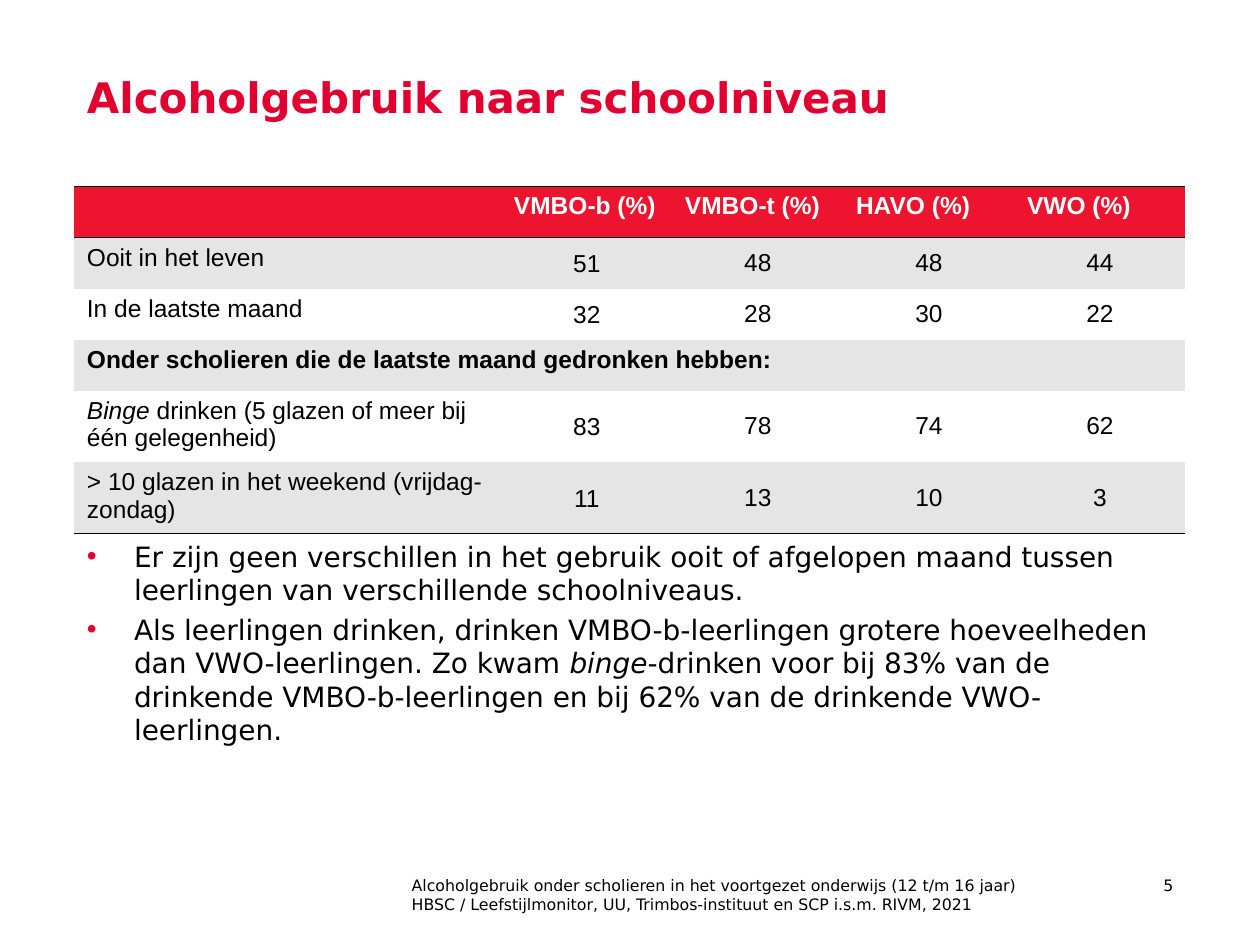
"""Builds the slide on alcohol use by school level."""
from lxml import etree
from pptx import Presentation, util as u
from pptx.dml import color
from pptx.enum import text
from pptx.oxml import ns

Pt = u.Pt
HUES = {"red": "E20031", "head": "EC142E", "grey": "E5E5E5",
        "white": "FFFFFF", "black": "000000"}
SANS = "DejaVu Sans"
TITLE = {"name": SANS, "size": Pt(24), "bold": True}
BODY = {"name": SANS, "size": Pt(16)}
FOOT = {"name": SANS, "size": Pt(9)}
CELL = {"name": "Arial", "size": Pt(14), "bold": False}
BOLD = {**CELL, "bold": True}
LEFT, WIDE = 42.5, 635
PLAIN = "{2D5ABB26-0587-4C30-8999-92F81FD0307C}"
HEADS = ["", "VMBO-b (%)", "VMBO-t (%)", "HAVO (%)", "VWO (%)"]
ROWS = [
    (["Ooit in het leven"], [51, 48, 48, 44]),
    (["In de laatste maand"], [32, 28, 30, 22]),
    (["Onder scholieren die de laatste maand gedronken hebben:"], []),
    (["", "Binge", " drinken (5 glazen of meer bij één gelegenheid)"],
     [83, 78, 74, 62]),
    (["> 10 glazen in het weekend (vrijdag-zondag)"], [11, 13, 10, 3]),
]
POINTS = [
    ["Er zijn geen verschillen in het gebruik ooit of afgelopen maand tussen "
     "leerlingen van verschillende schoolniveaus."],
    ["Als leerlingen drinken, drinken VMBO-b-leerlingen grotere hoeveelheden "
     "dan VWO-leerlingen. Zo kwam ", "binge",
     "-drinken voor bij 83% van de drinkende VMBO-b-leerlingen en bij 62% "
     "van de drinkende VWO-leerlingen."],
]
SOURCE = [
    ["Alcoholgebruik onder scholieren in het voortgezet onderwijs "
     "(12 t/m 16 jaar)"],
    ["HBSC / Leefstijlmonitor, UU, Trimbos-instituut en SCP i.s.m. RIVM, 2021"],
]


def tint(hue):
    """Return the named colour."""
    return color.RGBColor.from_string(HUES[hue])


def assign(item, form):
    """Set every attribute named in a dict."""
    for key, val in form.items():
        setattr(item, key, val)


def write(para, parts, form, hue="black"):
    """Add runs to a paragraph, with every second one in italics."""
    for num, part in enumerate(parts):
        if part:
            run = para.add_run()
            run.text = part
            assign(run.font, {**form, "italic": num % 2 == 1})
            run.font.color.rgb = tint(hue)


def bullet(para):
    """Give a paragraph a red bullet with a hanging indent."""
    prop = para._p.get_or_add_pPr()
    prop.set("marL", str(Pt(27)))
    prop.set("indent", str(Pt(-27)))
    clr = etree.SubElement(prop, ns.qn("a:buClr"))
    etree.SubElement(clr, ns.qn("a:srgbClr"), val=HUES["red"])
    etree.SubElement(prop, ns.qn("a:buFont"), typeface="Arial")
    etree.SubElement(prop, ns.qn("a:buChar"), char="•")


def add_text(slide, area, lines, form, align="LEFT", dots=False):
    """Add a wrapped text box with one paragraph per line."""
    frame = slide.shapes.add_textbox(*map(Pt, area)).text_frame
    frame.word_wrap = True
    for num, parts in enumerate(lines):
        para = frame.add_paragraph() if num else frame.paragraphs[0]
        para.alignment = text.PP_ALIGN[align]
        if dots:
            if num:
                para.space_before = Pt(3.2)
            bullet(para)
        write(para, parts, form)


def add_title(slide, words):
    """Place and format the title."""
    title = slide.shapes.title
    assign(title, {"left": Pt(LEFT), "top": Pt(37.5),
                   "width": Pt(WIDE), "height": Pt(90.5)})
    frame = title.text_frame
    assign(frame, {"vertical_anchor": text.MSO_ANCHOR.TOP,
                   "auto_size": text.MSO_AUTO_SIZE.NONE, "word_wrap": True})
    para = frame.paragraphs[0]
    para.alignment = text.PP_ALIGN.LEFT
    write(para, [words], TITLE, "red")


def rule(cell, side):
    """Draw a black line on one side of a cell."""
    prop = cell._tc.get_or_add_tcPr()
    line = etree.SubElement(prop, ns.qn("a:ln" + side), w=str(Pt(1)))
    fill = etree.SubElement(line, ns.qn("a:solidFill"))
    etree.SubElement(fill, ns.qn("a:srgbClr"), val=HUES["black"])


def paint(cell, hue, sides=""):
    """Rule the given sides of a cell and fill it."""
    for side in sides:
        rule(cell, side)
    cell.fill.solid()
    cell.fill.fore_color.rgb = tint(hue)


def put_value(cell, val, first):
    """Write a centred figure in a cell with narrow margins."""
    edge = 0.7 if first else 1.4
    assign(cell, {"vertical_anchor": text.MSO_ANCHOR.MIDDLE,
                  "margin_left": Pt(0.7), "margin_right": Pt(0.7),
                  "margin_top": Pt(edge),
                  "margin_bottom": Pt(0 if first else edge)})
    para = cell.text_frame.paragraphs[0]
    para.alignment = text.PP_ALIGN.CENTER
    write(para, [str(val)], CELL)


def add_grid(slide):
    """Add the table of percentages by school level."""
    count = len(ROWS) + 1
    grid = slide.shapes.add_table(count, len(HEADS), Pt(LEFT), Pt(106.5),
                                  Pt(WIDE), Pt(29.2 * count)).table
    grid._tbl.tblPr.find(ns.qn("a:tableStyleId")).text = PLAIN
    for num, col in enumerate(grid.columns):
        col.width = Pt(97.75 if num else 244)
    for num, row in enumerate(grid.rows):
        row.height = Pt(29.2 if num < 4 else 38.9)
    for num, head in enumerate(HEADS):
        cell = grid.cell(0, num)
        paint(cell, "head", "TB")
        write(cell.text_frame.paragraphs[0], [head], BOLD, "white")
    for num, (label, vals) in enumerate(ROWS, 1):
        for col in range(len(HEADS)):
            paint(grid.cell(num, col), "grey" if num % 2 else "white",
                  "B" if num == len(ROWS) else "")
        cell = grid.cell(num, 0)
        write(cell.text_frame.paragraphs[0], label, CELL if vals else BOLD)
        if not vals:
            cell.merge(grid.cell(num, len(HEADS) - 1))
        for col, val in enumerate(vals, 1):
            put_value(grid.cell(num, col), val, col == 1)


def main():
    """Build and save the slide."""
    deck = Presentation()
    assign(deck, {"slide_width": Pt(720), "slide_height": Pt(540)})
    slide = deck.slides.add_slide(deck.slide_layouts[5])
    add_title(slide, "Alcoholgebruik naar schoolniveau")
    add_text(slide, (228.2, 496.8, 421, 29), SOURCE, FOOT)
    add_text(slide, (620.6, 496.8, 57, 29), [["5"]], FOOT, "RIGHT")
    add_text(slide, (LEFT, 304.6, WIDE, 147.6), POINTS, BODY, dots=True)
    add_grid(slide)
    deck.save("out.pptx")


if __name__ == "__main__":
    main()
